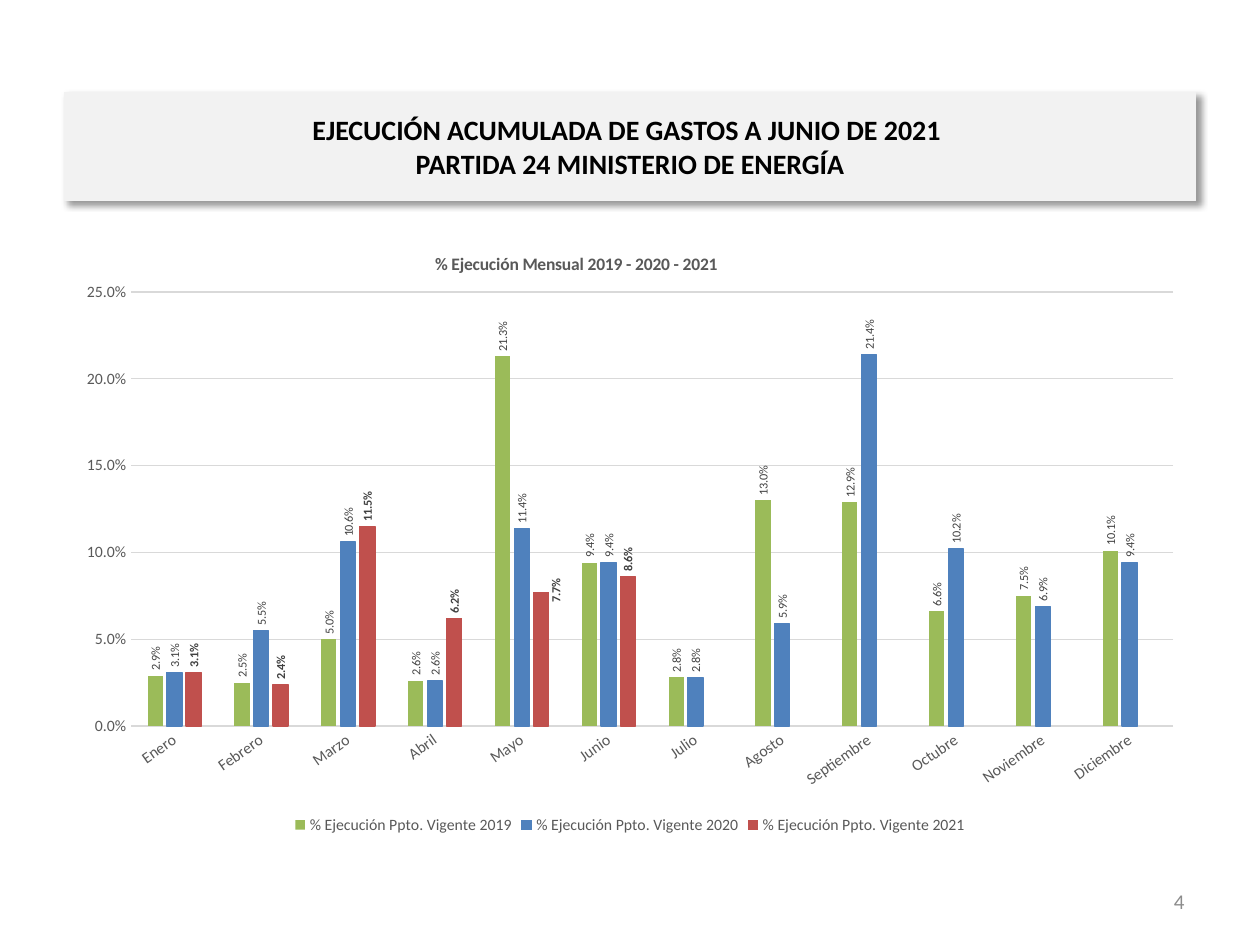
from lxml.etree import SubElement
from pptx import Presentation
from pptx.chart.data import CategoryChartData as Data
from pptx.dml.color import RGBColor
from pptx.enum.chart import XL_CHART_TYPE as Kind, XL_LABEL_POSITION as Spot
from pptx.enum.chart import XL_LEGEND_POSITION as Side, XL_TICK_MARK as Tick
from pptx.enum.text import MSO_ANCHOR as Anchor, PP_ALIGN as Align
from pptx.oxml import parse_xml
from pptx.oxml.ns import nsdecls, qn
from pptx.util import Pt

HEAD = "EJECUCIÓN ACUMULADA DE GASTOS A JUNIO DE 2021 \vPARTIDA 24 MINISTERIO DE ENERGÍA"
NAME = "% Ejecución Mensual 2019 - 2020 - 2021"
PAGE = "4"
MONTHS = ["Enero", "Febrero", "Marzo", "Abril", "Mayo", "Junio", "Julio",
          "Agosto", "Septiembre", "Octubre", "Noviembre", "Diciembre"]
YEARS = [
    (2019, "9BBB59", [2.9, 2.5, 5.0, 2.6, 21.3, 9.4, 2.8, 13.0, 12.9, 6.6, 7.5, 10.1]),
    (2020, "4F81BD", [3.1, 5.5, 10.6, 2.6, 11.4, 9.4, 2.8, 5.9, 21.4, 10.2, 6.9, 9.4]),
    (2021, "C0504D", [3.1, 2.4, 11.5, 6.2, 7.7, 8.6]),
]
LEFT, WIDE = 36.7, 646.6
GREY, RULE, PALE = "595959", "D9D9D9", "F2F2F2"
SHADE = (f'<a:effectLst {nsdecls("a")}><a:outerShdw blurRad="{Pt(4)}" dist="{Pt(3)}" '
         'dir="2700000" algn="tl" rotWithShape="0"><a:srgbClr val="000000">'
         '<a:alpha val="40000"/></a:srgbClr></a:outerShdw></a:effectLst>')


def paint(fill, tone):
    fill.solid()
    fill.fore_color.rgb = RGBColor.from_string(tone)


def style(font, size, tone, bold=False):
    font.name, font.size, font.bold = "Calibri", Pt(size), bold
    paint(font.fill, tone)


def rule(line, tone):
    paint(line.fill, tone)
    line.width = Pt(0.75)


def place(shape, *box):
    shape.left, shape.top, shape.width, shape.height = map(Pt, box)


def turn(node, angle):
    body = next(node.iter(qn("a:bodyPr")))
    body.set("rot", str(angle * 60000))
    body.set("vert", "horz")


def lay(layout, **parts):
    manual = SubElement(layout, qn("c:manualLayout"))
    for key, val in parts.items():
        SubElement(manual, qn("c:" + key)).set("val", str(val))


def layout():
    return parse_xml(f'<c:layout {nsdecls("c")}/>')


def add_head(slide):
    head = slide.shapes.title
    place(head, LEFT, 52.8, WIDE, 61.9)
    paint(head.fill, PALE)
    rule(head.line, PALE)
    head._element.spPr.append(parse_xml(SHADE))
    frame = head.text_frame
    frame.text = HEAD
    frame.vertical_anchor = Anchor.MIDDLE
    para = frame.paragraphs[0]
    para.alignment = Align.CENTER
    for run in para.runs:
        style(run.font, 16, "000000", True)


def add_page(slide):
    box = slide.shapes.add_textbox(Pt(516.2), Pt(500.4), Pt(167.8), Pt(28.8))
    frame = box.text_frame
    frame.word_wrap = True
    frame.text = PAGE
    frame.vertical_anchor = Anchor.MIDDLE
    para = frame.paragraphs[0]
    para.alignment = Align.RIGHT
    style(para.runs[0].font, 12, "8C8C8C")


def set_axes(chart):
    cat, val = chart.category_axis, chart.value_axis
    for axis in (cat, val):
        axis.major_tick_mark = axis.minor_tick_mark = Tick.NONE
        style(axis.tick_labels.font, 9, GREY)
    rule(cat.format.line, RULE)
    turn(cat._element, -35)
    val.format.line.fill.background()
    val.minimum_scale, val.maximum_scale, val.major_unit = 0, 0.25, 0.05
    val.tick_labels.number_format = "0.0%"
    val.tick_labels.number_format_is_linked = False
    rule(val.major_gridlines.format.line, RULE)


def set_bars(chart):
    plot = chart.plots[0]
    plot.gap_width, plot.overlap, plot.vary_by_categories = 219, -27, False
    for bars, (year, tone, _) in zip(plot.series, YEARS):
        paint(bars.format.fill, tone)
        if year > 2019:
            rule(bars.format.line, tone)
        bars.invert_if_negative = False
        tags = bars.data_labels
        tags.show_value = True
        tags.number_format, tags.number_format_is_linked = "0.0%", False
        tags.position = Spot.OUTSIDE_END
        style(tags.font, 7, "404040", year == 2021)
        turn(tags._element, -90)
    tag = bars.points[MONTHS.index("Mayo")].data_label
    style(tag.font, 7, "404040", True)
    tag.position = Spot.OUTSIDE_END
    node = next(bars._element.iter(qn("c:dLbl")))
    turn(node, -90)
    shift = layout()
    node.find(qn("c:idx")).addnext(shift)
    lay(shift, x=0.013, y=0.025)


def add_chart(slide):
    data = Data(number_format="0.0%")
    data.categories = MONTHS
    for year, _, vals in YEARS:
        full = [round(v / 100, 3) for v in vals] + [None] * (len(MONTHS) - len(vals))
        data.add_series(f"% Ejecución Ppto. Vigente {year}", full)
    chart = slide.shapes.add_chart(Kind.COLUMN_CLUSTERED, Pt(LEFT), Pt(126.7),
                                   Pt(WIDE), Pt(352.8), data).chart
    style(chart.font, 10, "000000")
    chart.has_title = True
    title = chart.chart_title
    title.text_frame.text = NAME
    style(title.text_frame.paragraphs[0].runs[0].font, 10, GREY, True)
    node = title._element
    spot = node.find(qn("c:layout"))
    if spot is None:
        spot = layout()
        node.find(qn("c:tx")).addnext(spot)
    lay(spot, xMode="edge", yMode="edge", x=0.325, y=0.045)
    chart.has_legend = True
    chart.legend.position = Side.BOTTOM
    chart.legend.include_in_layout = False
    style(chart.legend.font, 9, GREY)
    set_axes(chart)
    set_bars(chart)
    area = next(chart._chartSpace.iter(qn("c:plotArea")))
    spot = area.find(qn("c:layout"))
    if spot is None:
        spot = layout()
        area.insert(0, spot)
    lay(spot, layoutTarget="inner", xMode="edge", yMode="edge",
        x=0.059, y=0.114, w=0.921, h=0.703)


def main():
    deck = Presentation()
    deck.slide_width, deck.slide_height = Pt(720), Pt(540)
    slide = deck.slides.add_slide(deck.slide_layouts[5])
    add_head(slide)
    add_chart(slide)
    add_page(slide)
    deck.save("out.pptx")


if __name__ == "__main__":
    main()
